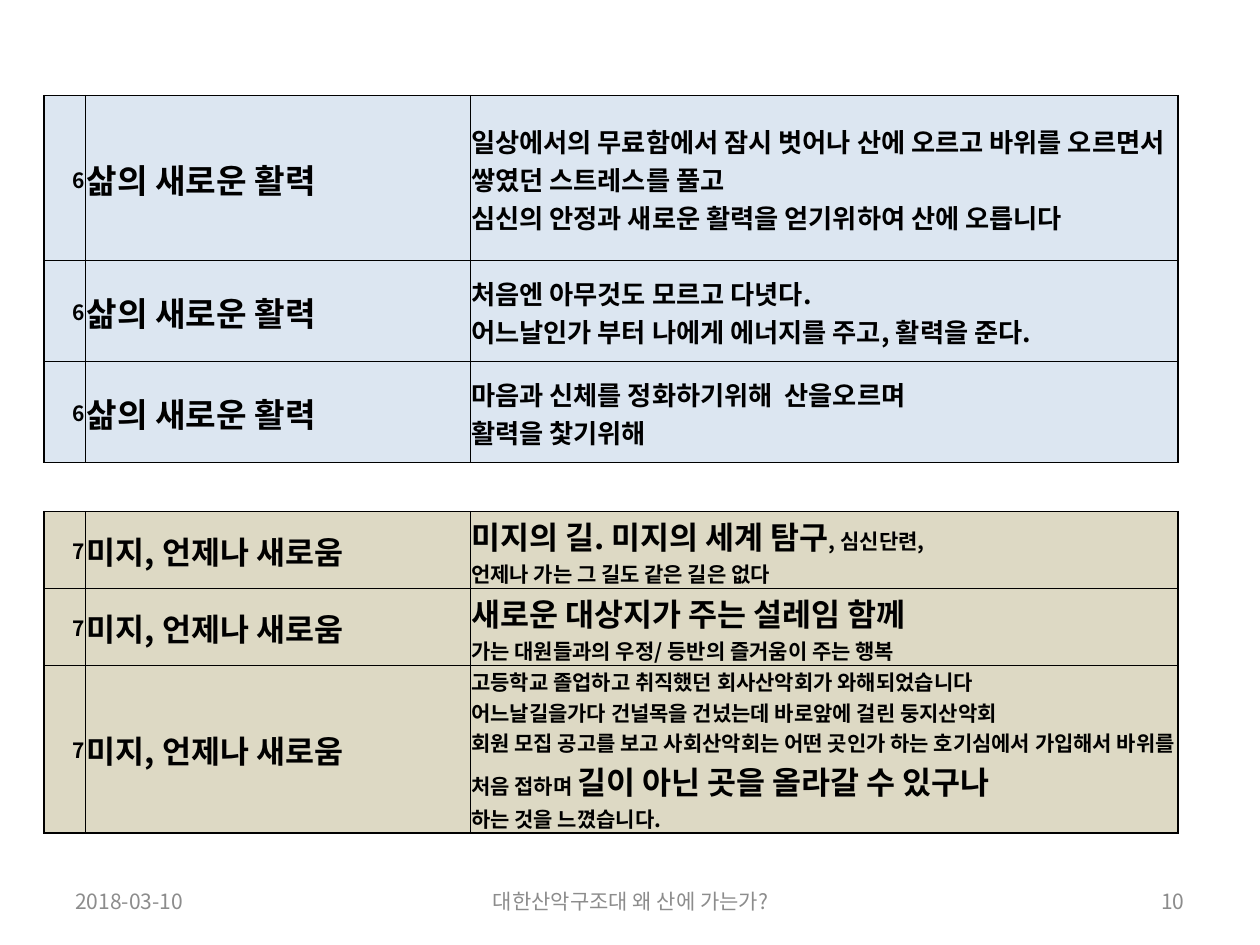
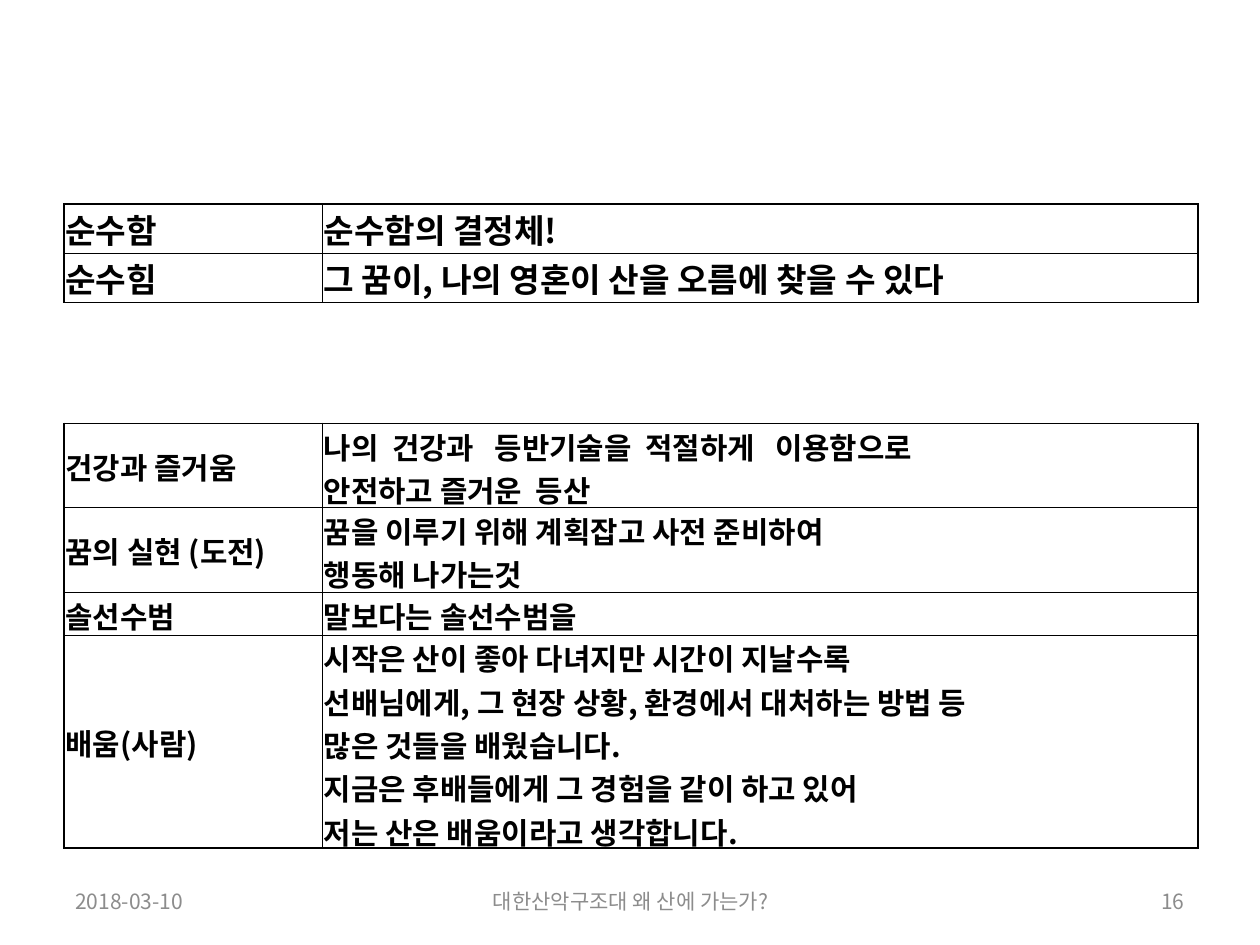
from lxml import etree
from pptx import Presentation
from pptx.dml.color import RGBColor
from pptx.enum import text as txt
from pptx.oxml.ns import qn
from pptx.util import Inches, Pt

FONT = "Noto Sans CJK KR"
COLORS = {"ink": "000000", "footer": "8C8C8C", "vitality": "DCE6F1", "unknown": "DDD9C4"}
LEFT, CENTER, RIGHT = txt.PP_ALIGN.LEFT, txt.PP_ALIGN.CENTER, txt.PP_ALIGN.RIGHT
DATE, EVENT = "2018-03-10", "대한산악구조대 왜 산에 가는가?"
OUTER, INNER = 1, 0.5
NUMBERED_COLS = (0.33, 3.05, 5.62)
PLAIN_COLS = (2.05, 6.95)

VITALITY = [
    "일상에서의 무료함에서 잠시 벗어나 산에 오르고 바위를 오르면서 쌓였던 스트레스를 풀고\n"
    "심신의 안정과 새로운 활력을 얻기위하여 산에 오릅니다",
    "처음엔 아무것도 모르고 다녓다.\n어느날인가 부터 나에게 에너지를 주고, 활력을 준다.",
    "마음과 신체를 정화하기위해  산을오르며\n활력을 찿기위해",
]
UNKNOWN = [
    [("미지의 길. 미지의 세계 탐구", 18),
     (", 심신단련,\n언제나 가는 그 길도 같은 길은 없다", 12)],
    [("새로운 대상지가 주는 설레임 함께\n", 18),
     ("가는 대원들과의 우정/ 등반의 즐거움이 주는 행복", 12)],
    [("고등학교 졸업하고 취직했던 회사산악회가 와해되었습니다\n"
      "어느날길을가다 건널목을 건넜는데 바로앞에 걸린 둥지산악회\n"
      "회원 모집 공고를 보고 사회산악회는 어떤 곳인가 하는 호기심에서 가입해서 "
      "바위를 처음 접하며 ", 12),
     ("길이 아닌 곳을 올라갈 수 있구나\n", 18),
     ("하는 것을 느꼈습니다.", 12)],
]
PURITY = [
    ("순수함", "순수함의 결정체!"),
    ("순수힘", "그 꿈이, 나의 영혼이 산을 오름에 찾을 수 있다"),
]
REASONS = [
    ("건강과 즐거움", "나의  건강과   등반기술을  적절하게   이용함으로\n안전하고 즐거운  등산"),
    ("꿈의 실현 (도전)", "꿈을 이루기 위해 계획잡고 사전 준비하여\n행동해 나가는것"),
    ("솔선수범", "말보다는 솔선수범을"),
    ("배움(사람)",
     "시작은 산이 좋아 다녀지만 시간이 지날수록\n"
     "선배님에게, 그 현장 상황, 환경에서 대처하는 방법 등\n"
     "많은 것들을 배웠습니다.\n"
     "지금은 후배들에게 그 경험을 같이 하고 있어\n"
     "저는 산은 배움이라고 생각합니다."),
]


def write(p, content, size=12, color="ink", bold=True, align=LEFT):
    """Append text to a paragraph; each newline becomes a line break of the same size."""
    p.alignment = align
    for i, line in enumerate(content.split("\n")):
        if i:
            p.add_line_break()
            br = p._p.findall(qn("a:br"))[-1]
            etree.SubElement(br, qn("a:rPr"), sz=str(size * 100))
        if not line:
            continue
        r = p.add_run()
        r.text = line
        r.font.size, r.font.bold, r.font.name = Pt(size), bold, FONT
        r.font.color.rgb = RGBColor.from_string(COLORS[color])
        etree.SubElement(r._r.get_or_add_rPr(), qn("a:ea"), typeface=FONT)


def add_border(cell, side, width):
    ln = etree.SubElement(cell._tc.get_or_add_tcPr(), qn("a:ln" + side),
                          w=str(Pt(width)))
    fill = etree.SubElement(ln, qn("a:solidFill"))
    etree.SubElement(fill, qn("a:srgbClr"), val=COLORS["ink"])


def format_cell(cell, at_edge, fill):
    cell.vertical_anchor = txt.MSO_ANCHOR.MIDDLE
    cell.margin_left = cell.margin_right = cell.margin_top = Inches(0.01)
    cell.margin_bottom = 0
    for side in "LRTB":
        add_border(cell, side, OUTER if at_edge[side] else INNER)
    if fill:
        cell.fill.solid()
        cell.fill.fore_color.rgb = RGBColor.from_string(COLORS[fill])
    else:
        cell.fill.background()


def add_answers(slide, left, top, widths, heights, rows, fill=None):
    """Draw a table; each cell is a list of (text, size), and a first column of numbers goes right."""
    frame = slide.shapes.add_table(len(heights), len(widths), Inches(left), Inches(top),
                                   Inches(sum(widths)), Inches(sum(heights)))
    table = frame.table
    table.first_row = table.horz_banding = False
    for column, width in zip(table.columns, widths):
        column.width = Inches(width)
    for i, (height, row) in enumerate(zip(heights, rows)):
        table.rows[i].height = Inches(height)
        for j, parts in enumerate(row):
            cell = table.cell(i, j)
            at_edge = {"L": j == 0, "R": j == len(widths) - 1,
                       "T": i == 0, "B": i == len(heights) - 1}
            format_cell(cell, at_edge, fill)
            align = RIGHT if parts[0][0].isdigit() else LEFT
            for content, size in parts:
                write(cell.text_frame.paragraphs[0], content, size, align=align)


def add_footer(slide, number):
    for left, width, content, align in ((0.5, 2.33, DATE, LEFT),
                                        (3.42, 3.17, EVENT, CENTER),
                                        (7.17, 2.33, number, RIGHT)):
        sp = slide.shapes.add_textbox(Inches(left), Inches(6.95), Inches(width), Inches(0.4))
        tf = sp.text_frame
        tf.word_wrap = True
        tf.vertical_anchor = txt.MSO_ANCHOR.MIDDLE
        write(tf.paragraphs[0], content, color="footer", bold=False, align=align)


def add_page(prs, number):
    slide = prs.slides.add_slide(prs.slide_layouts[6])
    add_footer(slide, number)
    return slide


def numbered(number, theme, size, answers):
    return [([(number, 12)], [(theme, size)], answer) for answer in answers]


def plain(rows, size):
    return [[[(content, size)] for content in row] for row in rows]


def main():
    prs = Presentation()
    prs.slide_width, prs.slide_height = Inches(10), Inches(7.5)

    slide = add_page(prs, "10")
    add_answers(slide, 0.35, 0.76, NUMBERED_COLS, (1.31, 0.8, 0.8),
                numbered("6", "삶의 새로운 활력", 19, [[(a, 15)] for a in VITALITY]), "vitality")
    add_answers(slide, 0.35, 4.06, NUMBERED_COLS, (0.61, 0.61, 1.33),
                numbered("7", "미지, 언제나 새로움", 18, UNKNOWN), "unknown")

    slide = add_page(prs, "16")
    add_answers(slide, 0.51, 1.62, PLAIN_COLS, (0.39, 0.39), plain(PURITY, 19))
    add_answers(slide, 0.51, 3.36, PLAIN_COLS, (0.67, 0.67, 0.34, 1.69), plain(REASONS, 17))

    prs.save("out.pptx")


if __name__ == "__main__":
    main()
